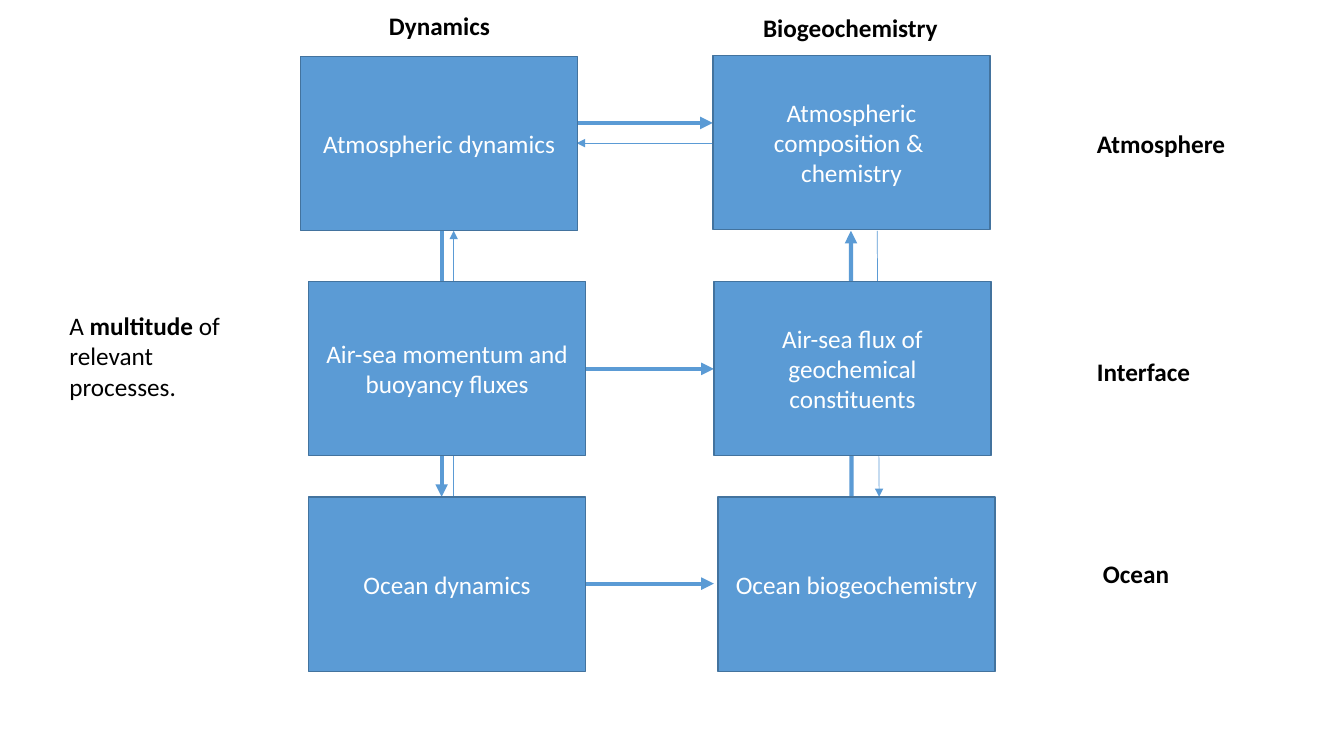
"""Build a slide of ocean and atmosphere boxes joined by arrows."""
from lxml import etree
from pptx import Presentation
from pptx.dml.color import RGBColor
from pptx.enum.shapes import MSO_CONNECTOR, MSO_SHAPE
from pptx.enum.text import MSO_ANCHOR, MSO_AUTO_SIZE, PP_ALIGN
from pptx.oxml.ns import qn
from pptx.util import Pt

PX = 9144
WIDE, HIGH = 1333, 750
BOX_W, BOX_H = 275, 173
FONT, SIZE = "Calibri", Pt(18)
THICK, THIN = Pt(3), Pt(0.5)
BLUE = RGBColor(0x5B, 0x9B, 0xD5)
EDGE = RGBColor(0x43, 0x73, 0x9E)
WHITE = RGBColor(255, 255, 255)
BLACK = RGBColor(0, 0, 0)
RECT = MSO_SHAPE.RECTANGLE
LINE = MSO_CONNECTOR.STRAIGHT
MIDDLE, CENTER = MSO_ANCHOR.MIDDLE, PP_ALIGN.CENTER
GROW = MSO_AUTO_SIZE.SHAPE_TO_FIT_TEXT

BOXES = [
    (298, 56, ["Atmospheric dynamics"]),
    (707, 55, ["Atmospheric composition & ", "chemistry"]),
    (306, 279, ["Air-sea momentum and buoyancy fluxes"]),
    (708, 279, ["Air-sea flux of geochemical constituents"]),
    (306, 493, ["Ocean dynamics"]),
    (712, 493, ["Ocean biogeochemistry"]),
]
ARROWS = [
    ((845, 666), (844, 229), THICK),
    ((438, 66), (438, 493), THICK),
    ((580, 579), (708, 579), THICK),
    ((580, 366), (708, 366), THICK),
    ((572, 122), (707, 122), THICK),
    ((708, 142), (572, 142), THIN),
    ((870, 229), (872, 493), THIN),
    ((450, 493), (450, 229), THIN),
]
LABELS = [
    (376, 5, 134, 40, [("Dynamics", True)]),
    (747, 7, 222, 40, [("Biogeochemistry", True)]),
    (1078, 122, 175, 40, [("Atmosphere", True)]),
    (1078, 349, 175, 40, [("Interface", True)]),
    (1084, 549, 175, 40, [("Ocean", True)]),
    (59, 303, 213, 101,
     [("A ", False), ("multitude", True), (" of relevant processes.", False)]),
]


def scale(*sizes):
    return [size * PX for size in sizes]


def add_run(para, text, color, bold=False):
    run = para.add_run()
    run.text = text
    run.font.name, run.font.size = FONT, SIZE
    run.font.bold = bold
    run.font.color.rgb = color


def add_arrow(slide, start, end, width):
    arrow = slide.shapes.add_connector(LINE, *scale(*start, *end))
    arrow.line.color.rgb = BLUE
    arrow.line.width = width
    tail = etree.SubElement(arrow.line._get_or_add_ln(), qn("a:tailEnd"))
    tail.set("type", "triangle")
    etree.SubElement(arrow._element.spPr, qn("a:effectLst"))


def add_box(slide, left, top, lines):
    box = slide.shapes.add_shape(RECT, *scale(left, top, BOX_W, BOX_H))
    box.shadow.inherit = False
    box.fill.solid()
    box.fill.fore_color.rgb = BLUE
    box.line.color.rgb = EDGE
    box.line.width = Pt(1)
    frame = box.text_frame
    frame.word_wrap = True
    frame.vertical_anchor = MIDDLE
    for i, text in enumerate(lines):
        para = frame.add_paragraph() if i else frame.paragraphs[0]
        para.alignment = CENTER
        add_run(para, text, WHITE)


def add_label(slide, left, top, width, height, runs):
    frame = slide.shapes.add_textbox(*scale(left, top, width, height)).text_frame
    frame.word_wrap = True
    frame.auto_size = GROW
    for text, bold in runs:
        add_run(frame.paragraphs[0], text, BLACK, bold)


def main():
    deck = Presentation()
    deck.slide_width, deck.slide_height = scale(WIDE, HIGH)
    slide = deck.slides.add_slide(deck.slide_layouts[6])
    for arrow in ARROWS:
        add_arrow(slide, *arrow)
    for box in BOXES:
        add_box(slide, *box)
    for label in LABELS:
        add_label(slide, *label)
    deck.save("out.pptx")


if __name__ == "__main__":
    main()
